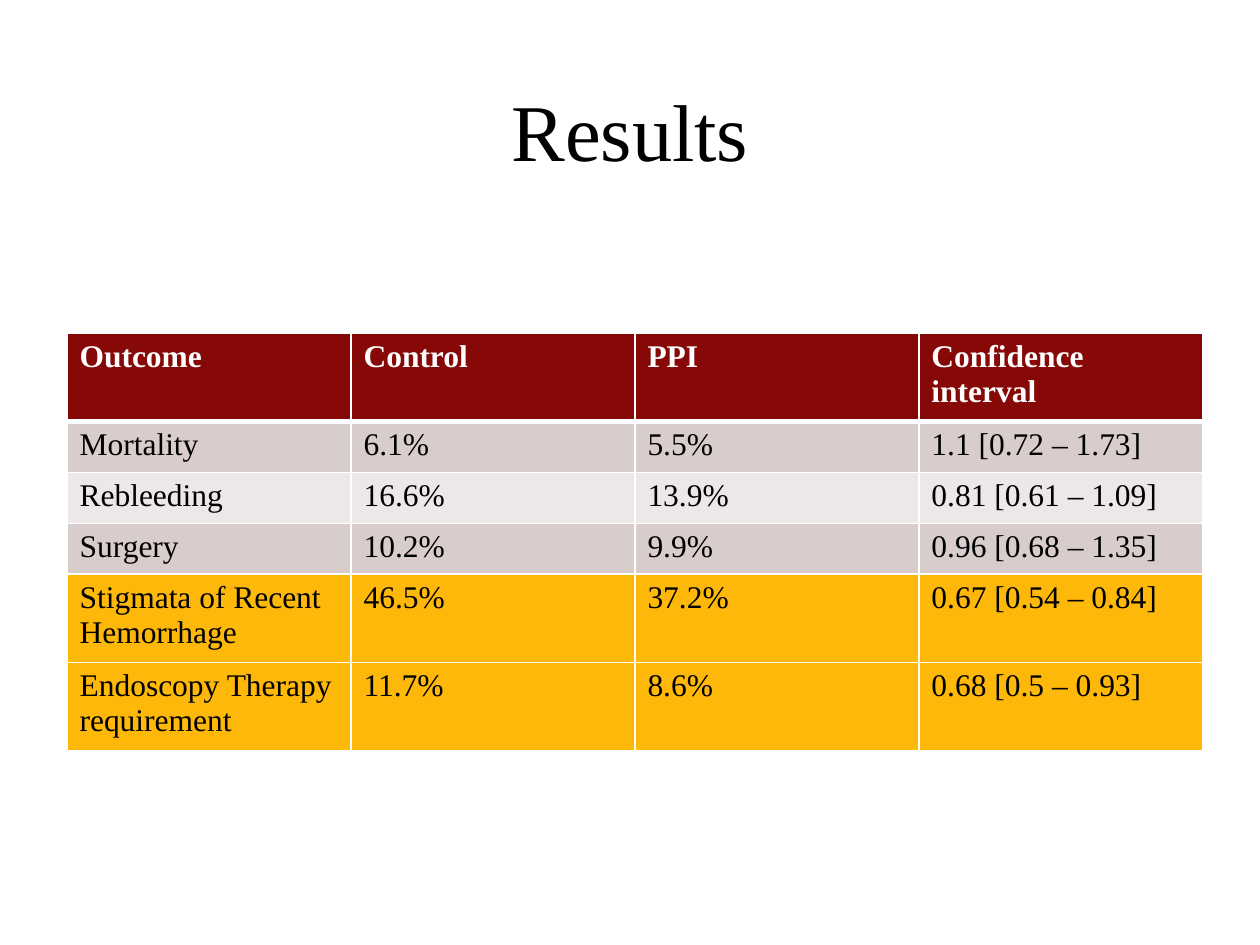
from lxml.etree import SubElement
from pptx import Presentation
from pptx.dml.color import RGBColor
from pptx.enum.text import MSO_ANCHOR, PP_ALIGN
from pptx.oxml.ns import qn
from pptx.util import Pt

PX = 914400 // 126
THEME = {
    "font": "Times New Roman", "title_size": 46, "cell_size": 18,
    "text": "000000", "header_text": "FFFFFF", "border": "FFFFFF",
    "header": "860908", "dark_band": "D9CCCC", "light_band": "EDE7E7",
    "highlight": "FEB80A",
}


def style_text(paragraph, size, color, bold=False):
    for run in paragraph.runs:
        run.font.name = THEME["font"]
        run.font.size = Pt(size)
        run.font.bold = bold
        run.font.color.rgb = RGBColor.from_string(THEME[color])


def add_borders(cell, bottom_width, top_width):
    properties = cell._tc.get_or_add_tcPr()
    widths = {"a:lnL": 1, "a:lnR": 1, "a:lnT": top_width, "a:lnB": bottom_width}
    for index, (tag, width) in enumerate(widths.items()):
        line = properties.makeelement(qn(tag), {"w": str(Pt(width))})
        fill = SubElement(line, qn("a:solidFill"))
        SubElement(fill, qn("a:srgbClr"), val=THEME["border"])
        properties.insert(index, line)


presentation = Presentation()
presentation.slide_width = 1260 * PX
presentation.slide_height = 945 * PX
slide = presentation.slides.add_slide(presentation.slide_layouts[6])

# Title
title = slide.shapes.add_textbox(126 * PX, 69 * PX, 1008 * PX, 120 * PX)
title.text_frame.word_wrap = True
title.text_frame.vertical_anchor = MSO_ANCHOR.MIDDLE
title.text_frame.text = "Results"
title_paragraph = title.text_frame.paragraphs[0]
title_paragraph.alignment = PP_ALIGN.CENTER
style_text(title_paragraph, THEME["title_size"], "text")

# Outcomes: row fill, row height, cell texts
outcomes = [
    ("header", 82, ["Outcome", "Control", "PPI", "Confidence interval"]),
    ("dark_band", 51, ["Mortality", "6.1%", "5.5%", "1.1 [0.72 – 1.73]"]),
    ("light_band", 51, ["Rebleeding", "16.6%", "13.9%", "0.81 [0.61 – 1.09]"]),
    ("dark_band", 51, ["Surgery", "10.2%", "9.9%", "0.96 [0.68 – 1.35]"]),
    ("highlight", 82, ["Stigmata of Recent Hemorrhage", "46.5%", "37.2%",
                       "0.67 [0.54 – 0.84]"]),
    ("highlight", 82, ["Endoscopy Therapy requirement", "11.7%", "8.6%",
                       "0.68 [0.5 – 0.93]"]),
]

# Results table
table_height = sum(height for _, height, _ in outcomes)
table = slide.shapes.add_table(
    len(outcomes), 4, 67 * PX, 333 * PX, 1136 * PX, table_height * PX).table
for column in table.columns:
    column.width = 284 * PX

for row_index, (fill, height, texts) in enumerate(outcomes):
    row = table.rows[row_index]
    row.height = height * PX
    is_header = row_index == 0
    for cell, text in zip(row.cells, texts):
        cell.text_frame.text = text
        style_text(cell.text_frame.paragraphs[0], THEME["cell_size"],
                   "header_text" if is_header else "text", is_header)
        cell.fill.solid()
        cell.fill.fore_color.rgb = RGBColor.from_string(THEME[fill])
        add_borders(cell, bottom_width=3 if is_header else 1,
                    top_width=3 if row_index == 1 else 1)

presentation.save("out.pptx")
